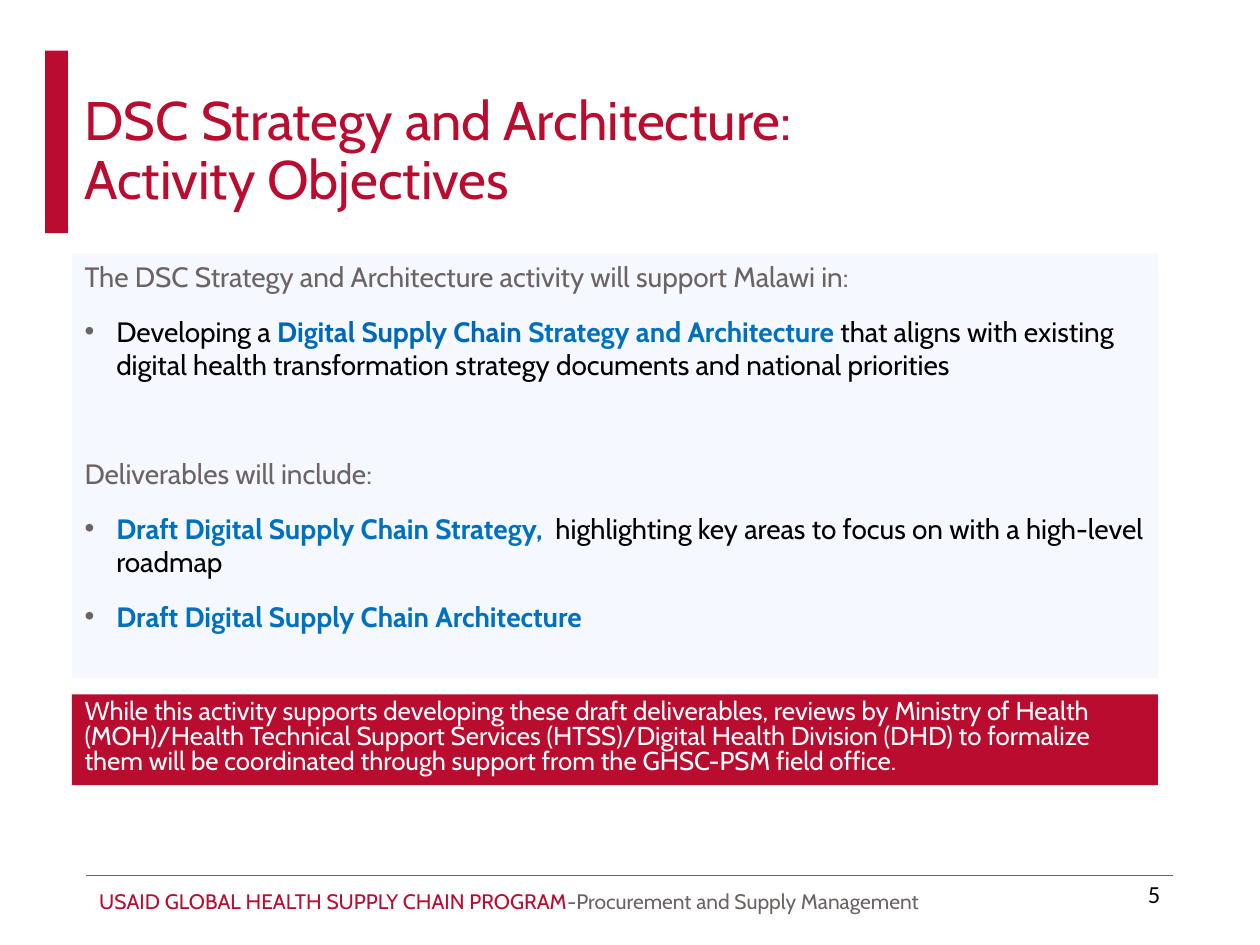
from dataclasses import dataclass, field

from lxml.etree import SubElement
from pptx import Presentation
from pptx.dml.color import RGBColor
from pptx.enum.shapes import MSO_CONNECTOR as Connector, MSO_SHAPE as Shape
from pptx.enum.text import MSO_ANCHOR as Anchor, MSO_AUTO_SIZE as AutoSize, PP_ALIGN as Align
from pptx.oxml.ns import qn
from pptx.util import Cm, Pt

COLORS = {
    "red": "BA0C2F",
    "gray": "6C6463",
    "black": "000000",
    "white": "FFFFFF",
    "pale": "F5F8FF",
    "blue": "0070C0",
    "deep_blue": "0067B9",
}


def rgb(name):
    return RGBColor.from_string(COLORS[name])


@dataclass
class SlideBuilder:
    slide: object
    font: str = "Cabin"
    colors: dict = field(default_factory=lambda: COLORS)

    def bar(self, left, top, width, height, color):
        shape = self.slide.shapes.add_shape(
            Shape.RECTANGLE, Cm(left), Cm(top), Cm(width), Cm(height))
        shape.shadow.inherit = False
        shape.fill.solid()
        shape.fill.fore_color.rgb = rgb(color)
        shape.line.fill.background()

    def rule(self, left, top, right, color, weight):
        line = self.slide.shapes.add_connector(
            Connector.STRAIGHT, Cm(left), Cm(top), Cm(right), Cm(top))
        line.line.color.rgb = rgb(color)
        line.line.width = Pt(weight)
        SubElement(line._element.spPr, qn("a:effectLst"))

    def placeholder(self, index, left, top, width, height, fill=None, anchor=Anchor.TOP):
        """Move a template placeholder, fill it and return its text frame."""
        shape = self.slide.placeholders[index]
        shape.left, shape.top = Cm(left), Cm(top)
        shape.width, shape.height = Cm(width), Cm(height)
        if fill:
            shape.fill.solid()
            shape.fill.fore_color.rgb = rgb(fill)
        return self.prepare(shape.text_frame, anchor)

    def text_box(self, left, top, width, height):
        shape = self.slide.shapes.add_textbox(Cm(left), Cm(top), Cm(width), Cm(height))
        return self.prepare(shape.text_frame, Anchor.TOP)

    def prepare(self, frame, anchor):
        frame.word_wrap = True
        frame.auto_size = AutoSize.NONE
        frame.vertical_anchor = anchor
        return frame

    def paragraph(self, frame, runs, size, before=0, bullet=False, spacing=1.0, font=None):
        """Write runs of (text, color, bold) into the next free paragraph.

        A newline in a run's text becomes a line break.
        """
        first = frame.paragraphs[0]
        paragraph = frame.add_paragraph() if first.runs else first
        self.mark(paragraph, bullet)
        paragraph.alignment = Align.LEFT
        paragraph.line_spacing = spacing
        paragraph.space_before = Pt(before)
        paragraph.space_after = Pt(0)
        paragraph.font.size = Pt(size)
        paragraph.font.name = font or self.font
        for text, color, *bold in runs:
            for number, line in enumerate(text.split("\n")):
                if number:
                    paragraph.add_line_break()
                run = paragraph.add_run()
                run.text = line
                run.font.color.rgb = rgb(color)
                run.font.bold = bool(bold)

    def mark(self, paragraph, bullet):
        """Set the bullet and hanging indent, or clear both."""
        properties = paragraph._p.get_or_add_pPr()
        indent = Cm(0.64) if bullet else 0
        properties.set("marL", str(indent))
        properties.set("indent", str(-indent))
        if bullet:
            color = SubElement(properties, qn("a:buClr"))
            SubElement(color, qn("a:srgbClr"), val=self.colors["gray"])
            SubElement(properties, qn("a:buFont"), typeface="Arial")
            SubElement(properties, qn("a:buChar"), char="•")
        else:
            SubElement(properties, qn("a:buNone"))


def main():
    presentation = Presentation()
    presentation.slide_width, presentation.slide_height = Cm(25.4), Cm(19.05)
    two_content = presentation.slide_layouts[3]
    builder = SlideBuilder(presentation.slides.add_slide(two_content))

    builder.bar(0.91, 1.02, 0.46, 3.68, "red")
    builder.rule(1.73, 17.65, 23.65, "gray", 0.5)

    title = builder.placeholder(0, 1.45, 1.75, 23.52, 2.64, anchor=Anchor.MIDDLE)
    builder.paragraph(
        title, [("DSC Strategy and Architecture:\nActivity Objectives", "red")],
        31, spacing=0.9)

    left, width = 1.45, 21.89
    objectives = builder.placeholder(1, left, 5.11, width, 8.56, "pale")
    # Each entry: space before, bullet, runs
    entries = [
        (0, False, [("The DSC Strategy and Architecture activity will support Malawi in:", "gray")]),
        (12, True, [
            ("Developing a ", "black"),
            ("Digital Supply Chain ", "deep_blue", True),
            ("Strategy and Architecture ", "blue", True),
            ("that aligns with existing digital health transformation strategy "
             "documents and national priorities", "black")]),
        (43, False, [("Deliverables will include:", "gray")]),
        (12, True, [
            ("Draft Digital Supply Chain Strategy,  ", "blue", True),
            ("highlighting key areas to focus on with a high-level roadmap", "black")]),
        (12, True, [("Draft Digital Supply Chain Architecture", "blue", True)]),
    ]
    for before, bullet, runs in entries:
        builder.paragraph(objectives, runs, 16, before, bullet)

    note = builder.placeholder(2, left, 14, width, 1.83, "red")
    builder.paragraph(note, [(
        "While this activity supports developing these draft deliverables, reviews by "
        "Ministry of Health (MOH)/Health Technical Support Services (HTSS)/Digital Health "
        "Division (DHD) to formalize them will be coordinated through support from the "
        "GHSC-PSM field office.", "white")], 14.8, spacing=0.8)

    footer = builder.text_box(1.75, 17.78, 18.9, 0.76)
    builder.paragraph(footer, [
        ("USAID GLOBAL HEALTH SUPPLY CHAIN PROGRAM", "red"),
        ("-Procurement and Supply Management", "gray")], 12)
    page_number = builder.text_box(22.89, 17.6, 0.76, 0.86)
    builder.paragraph(page_number, [("5", "black")], 14, font="Calibri")

    presentation.save("out.pptx")


if __name__ == "__main__":
    main()
